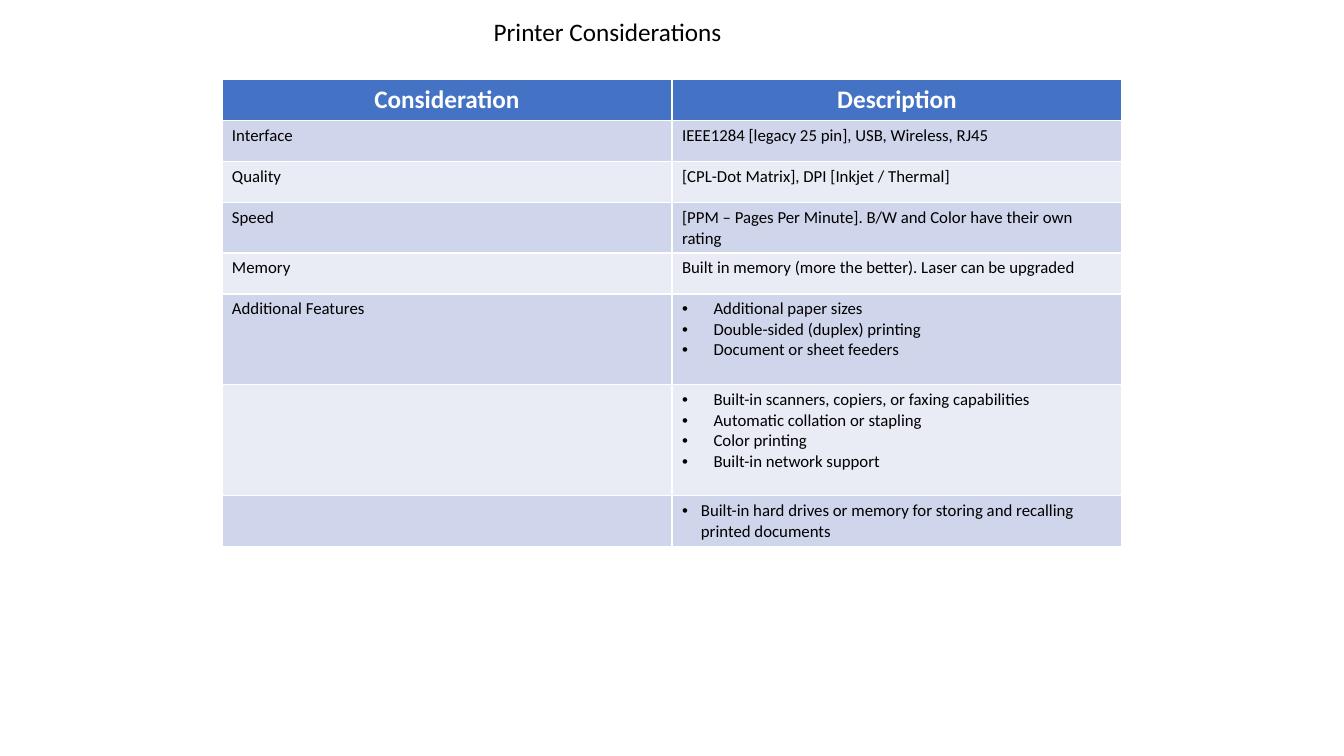
from lxml.etree import SubElement as Sub
from pptx import Presentation
from pptx.dml.color import RGBColor as Rgb
from pptx.enum.text import MSO_AUTO_SIZE as Auto, PP_ALIGN as Align
from pptx.oxml.ns import qn
from pptx.util import Pt

BLACK = Rgb(0x00, 0x00, 0x00)
WHITE = Rgb(0xFF, 0xFF, 0xFF)
BLUE = Rgb(0x44, 0x72, 0xC4)
BANDS = Rgb(0xCF, 0xD5, 0xEA), Rgb(0xE9, 0xEB, 0xF5)

ROWS = [
    ("Interface", ["IEEE1284 [legacy 25 pin], USB, Wireless, RJ45"], 29.25, 0),
    ("Quality", ["[CPL-Dot Matrix], DPI [Inkjet / Thermal]"], 29.25, 0),
    ("Speed", ["[PPM – Pages Per Minute]. B/W and Color have their own rating"], 35.75, 0),
    ("Memory", ["Built in memory (more the better). Laser can be upgraded"], 29.25, 0),
    ("Additional Features", [
        "Additional paper sizes",
        "Double-sided (duplex) printing",
        "Document or sheet feeders",
    ], 65, 22.5),
    ("", [
        "Built-in scanners, copiers, or faxing capabilities",
        "Automatic collation or stapling",
        "Color printing",
        "Built-in network support",
    ], 79.25, 22.5),
    ("", ["Built-in hard drives or memory for storing and recalling printed documents"], 35.75, 13.5),
]


def write(frame, lines, size=12, color=BLACK, bold=False, align=Align.LEFT, indent=0):
    for i, line in enumerate(lines):
        para = frame.add_paragraph() if i else frame.paragraphs[0]
        para.alignment = align
        if indent:
            props = para._p.get_or_add_pPr()
            props.set("marL", str(Pt(indent)))
            props.set("indent", str(-Pt(indent)))
            Sub(props, qn("a:buFont"), typeface="Arial")
            Sub(props, qn("a:buChar"), char="•")
        if line:
            run = para.add_run()
            run.text = line
            font = run.font
            font.name, font.size, font.bold = "Calibri", Pt(size), bold
            font.color.rgb = color


class Board:
    def __init__(self, slide):
        self.slide = slide
        self.head = dict(size=18, color=WHITE, bold=True, align=Align.CENTER)

    def title(self, text, left, top, width, height):
        box = self.slide.shapes.add_textbox(Pt(left), Pt(top), Pt(width), Pt(height))
        frame = box.text_frame
        frame.word_wrap = True
        frame.auto_size = Auto.SHAPE_TO_FIT_TEXT
        write(frame, [text], size=18)

    def cell(self, cell, lines, fill, **style):
        cell.fill.solid()
        cell.fill.fore_color.rgb = fill
        write(cell.text_frame, lines, **style)

    def table(self, names, rows, left, top, width, first):
        total = first + sum(row[2] for row in rows)
        grid = self.slide.shapes.add_table(
            len(rows) + 1, len(names), Pt(left), Pt(top), Pt(width), Pt(total)).table
        grid.rows[0].height = Pt(first)
        for col, name in enumerate(names):
            self.cell(grid.cell(0, col), [name], BLUE, **self.head)
        for i, (label, lines, height, indent) in enumerate(rows):
            fill = BANDS[i % 2]
            grid.rows[i + 1].height = Pt(height)
            self.cell(grid.cell(i + 1, 0), [label], fill)
            self.cell(grid.cell(i + 1, 1), lines, fill, indent=indent)


def main():
    deck = Presentation()
    deck.slide_width, deck.slide_height = Pt(960), Pt(540)
    board = Board(deck.slides.add_slide(deck.slide_layouts[6]))
    board.title("Printer Considerations", 345.6, 8, 216, 29)
    board.table(["Consideration", "Description"], ROWS, 158.5, 57, 643, 29.25)
    deck.save("out.pptx")


if __name__ == "__main__":
    main()
